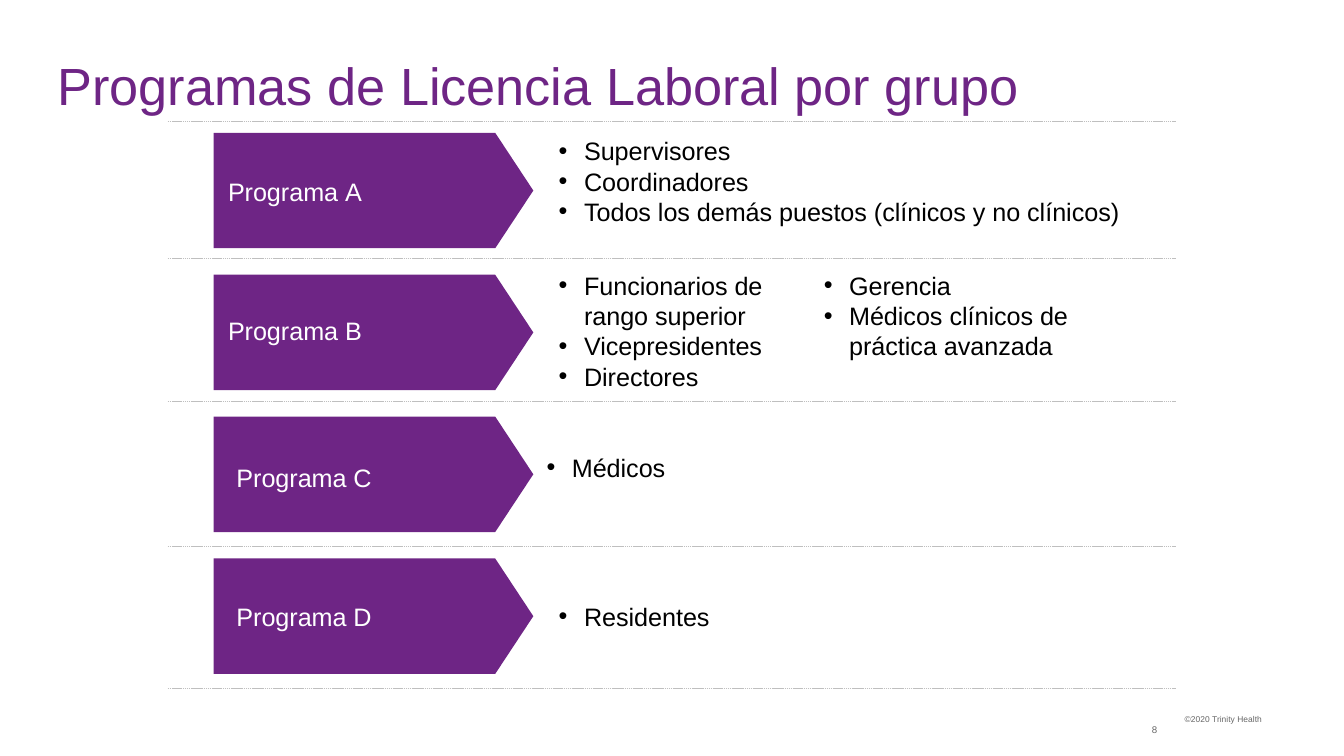
from lxml import etree
from pptx import Presentation
from pptx.dml.color import RGBColor
from pptx.enum import dml, shapes, text
from pptx.oxml.ns import qn
from pptx.util import Cm, Pt

PURPLE = RGBColor(0x6E, 0x25, 0x85)
WHITE = RGBColor(0xFF, 0xFF, 0xFF)
BLACK = RGBColor(0, 0, 0)
GRAY = RGBColor(0x66, 0x66, 0x66)
RULE_GRAY = RGBColor(0xBF, 0xBF, 0xBF)
FONT = "Arial"
BODY_SIZE = 13.5
ARROW_TOP, ARROW_PITCH = 2.51, 2.68
RULE_TOPS = (2.29, 4.88, 7.57, 10.31, 13)

LABELS = (
    ("Programa\u00a0A", 4.06, 3.2),
    ("Programa\u00a0B", 4.06, 5.84),
    ("Programa\u00a0C", 4.22, 8.61),
    ("Programa\u00a0D", 4.22, 11.23),
)
GROUPS = (
    (("Supervisores", "Coordinadores",
      "Todos los demás puestos (clínicos y no clínicos)"), (10.31, 2.44, 11.56, 1.98)),
    (("Funcionarios de \vrango superior", "Vicepresidentes", "Directores"),
     (10.31, 4.98, 5.79, 2.57)),
    (("Gerencia", "Médicos clínicos de \vpráctica avanzada"), (15.32, 4.98, 7.06, 1.98)),
    (("Médicos",), (10.08, 8.41, 11.46, 0.84)),
    (("Residentes",), (10.31, 11.23, 11.2, 0.84)),
)


def add_bullet(paragraph):
    """Give the paragraph a round bullet with a hanging indent."""
    properties = paragraph._p.get_or_add_pPr()
    properties.set("marL", str(Cm(0.48)))
    properties.set("indent", str(Cm(-0.48)))
    etree.SubElement(properties, qn("a:buFont")).set("typeface", FONT)
    etree.SubElement(properties, qn("a:buChar")).set("char", "•")


def write_text(frame, lines, size=BODY_SIZE, color=BLACK, bullet=False,
               align=text.PP_ALIGN.LEFT, anchor=text.MSO_ANCHOR.TOP, spacing=None):
    """Fill a text frame with one formatted paragraph per line."""
    frame.word_wrap = True
    frame.vertical_anchor = anchor
    for index, line in enumerate(lines):
        paragraph = frame.paragraphs[0] if index == 0 else frame.add_paragraph()
        paragraph.text = line
        paragraph.alignment = align
        paragraph.line_spacing = spacing
        if bullet:
            add_bullet(paragraph)
        for line_break in paragraph._p.findall(qn("a:br")):
            etree.SubElement(line_break, qn("a:rPr")).set("sz", str(int(size * 100)))
        for run in paragraph.runs:
            run.font.name = FONT
            run.font.size = Pt(size)
            run.font.color.rgb = color


def add_text(slide, lines, box, **style):
    """Add a text box placed in centimetres."""
    frame = slide.shapes.add_textbox(*map(Cm, box)).text_frame
    write_text(frame, lines, **style)
    return frame


def add_title(slide, title):
    """Place and format the title placeholder."""
    shape = slide.shapes.title
    shape.left, shape.top, shape.width, shape.height = map(Cm, (1.09, 0.97, 22.86, 1.4))
    frame = shape.text_frame
    frame.margin_left = frame.margin_right = frame.margin_top = frame.margin_bottom = 0
    frame.auto_size = text.MSO_AUTO_SIZE.NONE
    write_text(frame, [title], size=28, color=PURPLE,
               anchor=text.MSO_ANCHOR.MIDDLE, spacing=0.9)


def add_arrow(slide, top):
    """Add a purple pentagon arrow."""
    arrow = slide.shapes.add_shape(shapes.MSO_SHAPE.PENTAGON,
                                   Cm(4.04), Cm(top), Cm(6.04), Cm(2.18))
    arrow.adjustments[0] = 0.33
    arrow.shadow.inherit = False
    arrow.fill.solid()
    arrow.fill.fore_color.rgb = PURPLE
    arrow.line.fill.background()


def add_rule(slide, top):
    """Add a thin dashed line between programmes."""
    rule = slide.shapes.add_connector(shapes.MSO_CONNECTOR.STRAIGHT,
                                      Cm(3.17), Cm(top), Cm(22.23), Cm(top))
    rule.line.color.rgb = RULE_GRAY
    rule.line.width = Pt(0.25)
    rule.line.dash_style = dml.MSO_LINE.SQUARE_DOT
    etree.SubElement(rule._element.spPr, qn("a:effectLst"))


def add_footer(slide):
    """Add the slide number and the copyright line."""
    number = add_text(slide, ["8"], (21.03, 13.41, 0.84, 0.76), size=5.2, color=GRAY,
                      align=text.PP_ALIGN.RIGHT, anchor=text.MSO_ANCHOR.MIDDLE)
    number.margin_left, number.margin_right = Cm(0.18), 0
    number.margin_top = number.margin_bottom = Cm(0.1)
    add_text(slide, ["©2020 Trinity Health"], (16.1, 13.36, 8, 0.51), size=4.5,
             color=GRAY, align=text.PP_ALIGN.RIGHT)


def main():
    """Build the slide and save it."""
    presentation = Presentation()
    presentation.slide_width, presentation.slide_height = Cm(25.4), Cm(14.28)
    slide = presentation.slides.add_slide(presentation.slide_layouts[5])
    add_title(slide, "Programas de Licencia Laboral por grupo")
    for top in RULE_TOPS:
        add_rule(slide, top)
    for row, (label, left, top) in enumerate(LABELS):
        add_arrow(slide, ARROW_TOP + row * ARROW_PITCH)
        add_text(slide, [label], (left, top, 5.4, 0.84), color=WHITE)
    for lines, box in GROUPS:
        add_text(slide, lines, box, bullet=True)
    add_footer(slide)
    presentation.save("out.pptx")


if __name__ == "__main__":
    main()
